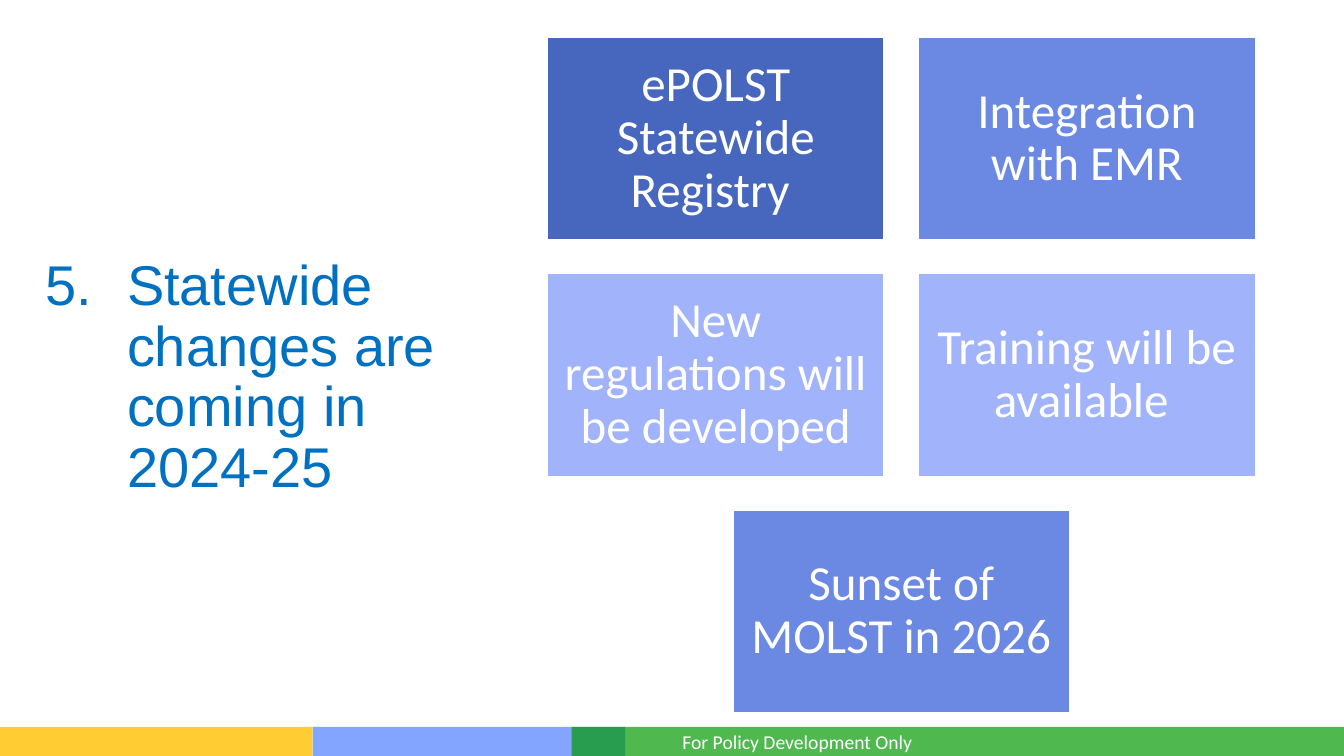
from dataclasses import dataclass

from lxml import etree
from pptx import Presentation
from pptx.dml.color import RGBColor
from pptx.enum import shapes, text
from pptx.oxml import ns
from pptx.util import Inches, Pt

WHITE = RGBColor(0xFF, 0xFF, 0xFF)
TITLE_BLUE = RGBColor(0x00, 0x70, 0xC0)
DARK_BLUE = RGBColor(0x46, 0x67, 0xBD)
MID_BLUE = RGBColor(0x6B, 0x89, 0xE3)
PALE_BLUE = RGBColor(0xA1, 0xB3, 0xFA)
BAND_BLUE = RGBColor(0x5E, 0x8B, 0xFF)
BAND_YELLOW = RGBColor(0xFF, 0xC0, 0x00)
BAND_GREEN = RGBColor(0x00, 0x99, 0x00)

CARD_WIDTH, CARD_HEIGHT = 3.34, 2.01
CARD_LEFT, CARD_TOP = 5.43, 0.37
COLUMN_STEP, ROW_STEP = 3.68, 2.345
BAND_TOP, BAND_HEIGHT = 7.21, 0.29


@dataclass
class Band:
    left: float
    width: float
    color: RGBColor
    opacity: int


@dataclass
class Card:
    column: float
    row: int
    color: RGBColor
    wording: str


BANDS = [
    Band(3.1, 3.1, BAND_BLUE, 77),
    Band(0, 3.1, BAND_YELLOW, 80),
    Band(5.67, 7.67, BAND_GREEN, 69),
]
CARDS = [
    Card(0, 0, DARK_BLUE, "ePOLST Statewide Registry "),
    Card(1, 0, MID_BLUE, "Integration with EMR"),
    Card(0, 1, PALE_BLUE, "New regulations will be developed"),
    Card(1, 1, PALE_BLUE, "Training will be available "),
    Card(0.5, 2, MID_BLUE, "Sunset of MOLST in 2026"),
]


def write(shape, wording: str, *, size: float, color: RGBColor, font: str = "Calibri",
          align=text.PP_ALIGN.LEFT, anchor=text.MSO_ANCHOR.MIDDLE,
          spacing: float = 0.9, inset: float | None = None,
          number: int | None = None, indent: float = 0) -> None:
    frame = shape.text_frame
    frame.word_wrap = True
    frame.auto_size = text.MSO_AUTO_SIZE.NONE
    frame.vertical_anchor = anchor
    if inset is not None:
        frame.margin_left = frame.margin_right = Inches(inset)
        frame.margin_top = frame.margin_bottom = Inches(inset)
    frame.text = wording
    paragraph = frame.paragraphs[0]
    paragraph.alignment = align
    paragraph.line_spacing = spacing
    if number is not None:
        properties = paragraph._p.get_or_add_pPr()
        properties.set("marL", str(Inches(indent)))
        properties.set("indent", str(-Inches(indent)))
        etree.SubElement(properties, ns.qn("a:buAutoNum"),
                         type="arabicPeriod", startAt=str(number))
    paragraph.font.size = Pt(size)
    paragraph.font.name = font
    paragraph.font.color.rgb = color


def add_block(slide, left: float, top: float, width: float, height: float,
              color: RGBColor):
    block = slide.shapes.add_shape(shapes.MSO_SHAPE.RECTANGLE, Inches(left),
                                   Inches(top), Inches(width), Inches(height))
    block.shadow.inherit = False
    block.fill.solid()
    block.fill.fore_color.rgb = color
    return block


def add_band(slide, band: Band) -> None:
    block = add_block(slide, band.left, BAND_TOP, band.width, BAND_HEIGHT, band.color)
    block.line.fill.background()
    color = block._element.spPr.find(".//" + ns.qn("a:srgbClr"))
    etree.SubElement(color, ns.qn("a:alpha"), val=str(band.opacity * 1000))


def add_card(slide, card: Card) -> None:
    block = add_block(slide, CARD_LEFT + card.column * COLUMN_STEP,
                      CARD_TOP + card.row * ROW_STEP,
                      CARD_WIDTH, CARD_HEIGHT, card.color)
    block.line.color.rgb = WHITE
    block.line.width = Pt(1)
    write(block, card.wording, size=35, color=WHITE,
          align=text.PP_ALIGN.CENTER, inset=0.15)


def main() -> None:
    deck = Presentation()
    deck.slide_width, deck.slide_height = Inches(13.33), Inches(7.5)
    slide = deck.slides.add_slide(deck.slide_layouts[5])

    # Footer bands and note
    for band in BANDS:
        add_band(slide, band)
    footer = slide.shapes.add_textbox(Inches(6.67), Inches(7.19),
                                      Inches(6.66), Inches(0.34))
    write(footer, "For Policy Development Only", size=14, color=WHITE,
          anchor=text.MSO_ANCHOR.TOP, spacing=1.0)

    # Statewide changes
    for card in CARDS:
        add_card(slide, card)

    # Numbered title
    title = slide.shapes.title
    title.left, title.top = Inches(0.35), Inches(0.7)
    title.width, title.height = Inches(4.38), Inches(6.11)
    write(title, "Statewide changes are coming in 2024-25", size=40,
          color=TITLE_BLUE, font="Arial", number=5, indent=0.81)

    deck.save("out.pptx")


if __name__ == "__main__":
    main()
